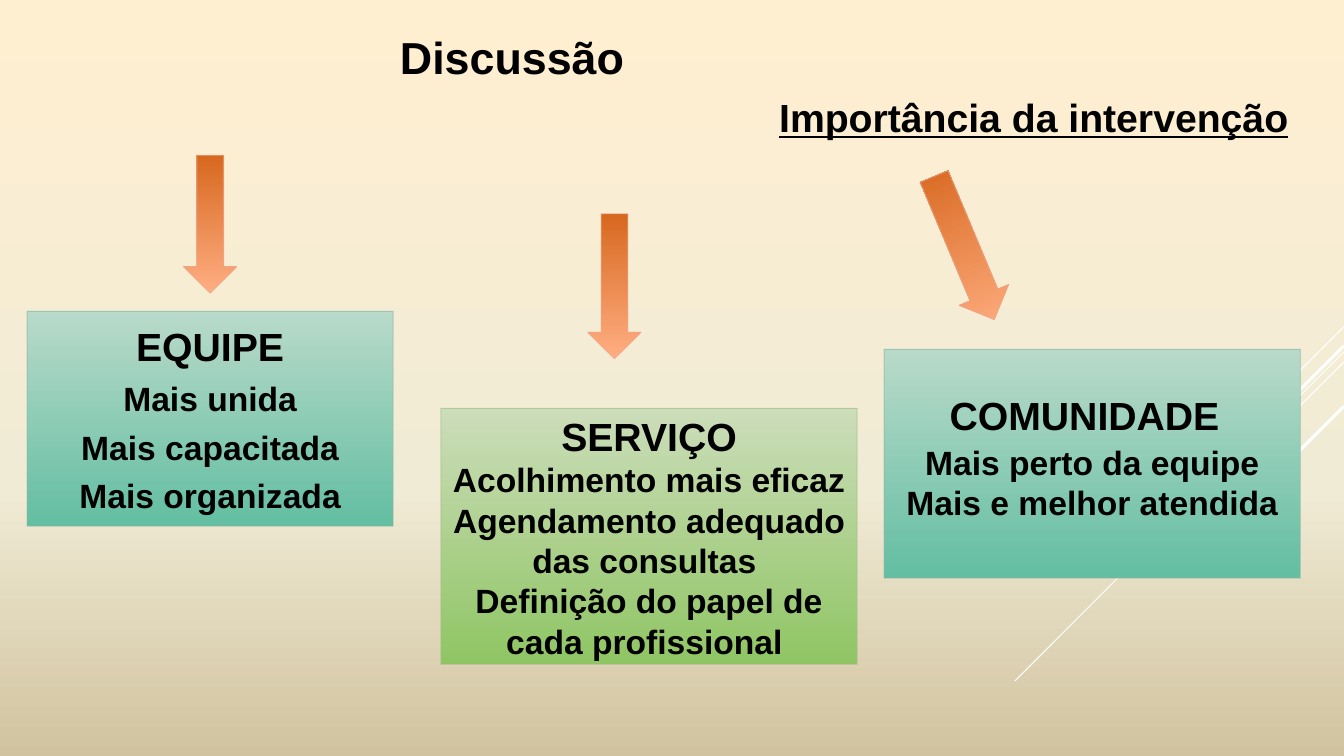
from copy import deepcopy
from dataclasses import dataclass

from lxml.etree import SubElement
from pptx import Presentation
from pptx.dml.color import RGBColor
from pptx.dml.fill import FillFormat
from pptx.enum.shapes import MSO_CONNECTOR, MSO_SHAPE
from pptx.enum.text import MSO_ANCHOR, PP_ALIGN
from pptx.oxml.ns import qn
from pptx.shapes.autoshape import Shape
from pptx.slide import Slide
from pptx.util import Pt

WIDE, HIGH = 960, 540
Stops = list[tuple[float, str]]
SAND: Stops = [(0, "FFEFD1"), (0.65, "F0EBD5"), (1, "D1C39F")]
TEAL: Stops = [(0, "B9DACA"), (1, "63BEA2")]
GREEN: Stops = [(0, "CCDDBA"), (1, "8FC563")]
RUST: Stops = [(0, "FFAE82"), (1, "D7681F")]


@dataclass
class Streak:
    """A diagonal running down and left from the slide's right edge."""
    top: float
    run: float
    weight: float


@dataclass
class Arrow:
    left: float
    top: float
    height: float
    turn: float = 180
    shaft: float = 0.5


@dataclass
class Card:
    left: float
    top: float
    width: float
    height: float
    stops: Stops
    edge: str
    head: str
    lines: list[str]
    before: float = 0
    after: float = 0
    foot: float = 3.6
    tail: float = 0  # size of a space that follows the heading


@dataclass
class Label:
    left: float
    top: float
    width: float
    height: float
    text: str
    size: float
    align: PP_ALIGN
    anchor: MSO_ANCHOR
    under: bool = False


STREAKS = [
    Streak(233.3, 72, 0.75),
    Streak(251.3, 235, 0.75),
    Streak(258.5, 149, 0.75),
    Streak(247, 137.5, 2.25),
    Streak(290.2, 100, 2.25),
]
ARROWS = [
    Arrow(131, 110.9, 98.6),
    Arrow(419.8, 152.6, 103.7),
    Arrow(669.6, 121.7, 110.9, 157.2, 0.564),
]
CARDS = [
    Card(19.4, 222.5, 261.4, 153.4, TEAL, "8AB7A1", "EQUIPE",
         ["Mais unida", "Mais capacitada", "Mais organizada"],
         before=5.6, after=6),
    Card(314.9, 291.7, 297.4, 182.9, GREEN, "A4BB8B", "SERVIÇO",
         ["Acolhimento mais eficaz", "Agendamento adequado das consultas ",
          "Definição do papel de cada profissional "]),
    Card(631.5, 249.6, 297.4, 163.3, TEAL, "8AB7A1", "COMUNIDADE",
         ["Mais perto da equipe", "Mais e melhor atendida"],
         foot=25, tail=40),
]
LABELS = [
    Label(536.4, 59.8, 403.9, 43.9, "Importância da intervenção", 28,
          PP_ALIGN.CENTER, MSO_ANCHOR.BOTTOM, True),
    Label(278.6, 18, 241.2, 46.1, "Discussão", 32,
          PP_ALIGN.LEFT, MSO_ANCHOR.TOP),
]


def color(code: str) -> RGBColor:
    return RGBColor.from_string(code)


def grade(fill: FillFormat, root, stops: Stops) -> None:
    """Fill from top to bottom with the given stops; root holds the fill."""
    fill.gradient()
    fill.gradient_angle = 270
    group = next(root.iter(qn("a:gsLst")))
    while len(group) < len(stops):
        group.append(deepcopy(group[-1]))
    for stop, (place, code) in zip(fill.gradient_stops, stops):
        stop.position = place
        stop.color.rgb = color(code)


def paint(shape: Shape, stops: Stops, edge: str) -> None:
    """Set the gradient and the thin, partly clear outline."""
    shape.shadow.inherit = False
    grade(shape.fill, shape._element, stops)
    shape.line.width = Pt(0.75)
    shape.line.color.rgb = color(edge)
    tint = shape.line._ln.find(".//" + qn("a:srgbClr"))
    SubElement(tint, qn("a:alpha"), val="60000")


def style(run, size: float, under: bool = False) -> None:
    font = run.font
    font.name, font.size, font.bold = "Arial", Pt(size), True
    font.color.rgb = color("000000")
    if under:
        font.underline = True


def add_streak(slide: Slide, streak: Streak) -> None:
    line = slide.shapes.add_connector(
        MSO_CONNECTOR.STRAIGHT, Pt(WIDE), Pt(streak.top),
        Pt(WIDE - streak.run), Pt(streak.top + streak.run))
    line.line.width = Pt(streak.weight)
    line.line.color.rgb = color("FFFFFF")
    SubElement(line._element.spPr, qn("a:effectLst"))


def add_arrow(slide: Slide, arrow: Arrow) -> None:
    shape = slide.shapes.add_shape(
        MSO_SHAPE.UP_ARROW, Pt(arrow.left), Pt(arrow.top),
        Pt(38.2), Pt(arrow.height))
    shape.rotation = arrow.turn
    shape.adjustments[0] = arrow.shaft
    shape.adjustments[1] = 0.5
    paint(shape, RUST, "EEA78F")


def add_card(slide: Slide, card: Card) -> None:
    shape = slide.shapes.add_shape(
        MSO_SHAPE.RECTANGLE, Pt(card.left), Pt(card.top),
        Pt(card.width), Pt(card.height))
    paint(shape, card.stops, card.edge)
    frame = shape.text_frame
    frame.word_wrap = True
    frame.vertical_anchor = MSO_ANCHOR.MIDDLE
    frame.margin_bottom = Pt(card.foot)
    frame.text = "\n".join([card.head, *card.lines])
    for row, para in enumerate(frame.paragraphs):
        para.alignment = PP_ALIGN.CENTER
        para.space_after = Pt(card.after)
        style(para.runs[0], 24 if row else 28)
    first = frame.paragraphs[0]
    first.space_before = Pt(card.before)
    if card.tail:
        space = first.add_run()
        space.text = " "
        style(space, card.tail)


def add_label(slide: Slide, label: Label) -> None:
    box = slide.shapes.add_textbox(
        Pt(label.left), Pt(label.top), Pt(label.width), Pt(label.height))
    frame = box.text_frame
    frame.word_wrap = True
    frame.vertical_anchor = label.anchor
    frame.text = label.text
    para = frame.paragraphs[0]
    para.alignment = label.align
    style(para.runs[0], label.size, label.under)


def main() -> None:
    deck = Presentation()
    deck.slide_width, deck.slide_height = Pt(WIDE), Pt(HIGH)
    slide = deck.slides.add_slide(deck.slide_layouts[6])
    grade(slide.background.fill, slide._element, SAND)
    for streak in STREAKS:
        add_streak(slide, streak)
    for card in CARDS:
        add_card(slide, card)
    for arrow in ARROWS:
        add_arrow(slide, arrow)
    for label in LABELS:
        add_label(slide, label)
    deck.save("out.pptx")


if __name__ == "__main__":
    main()
